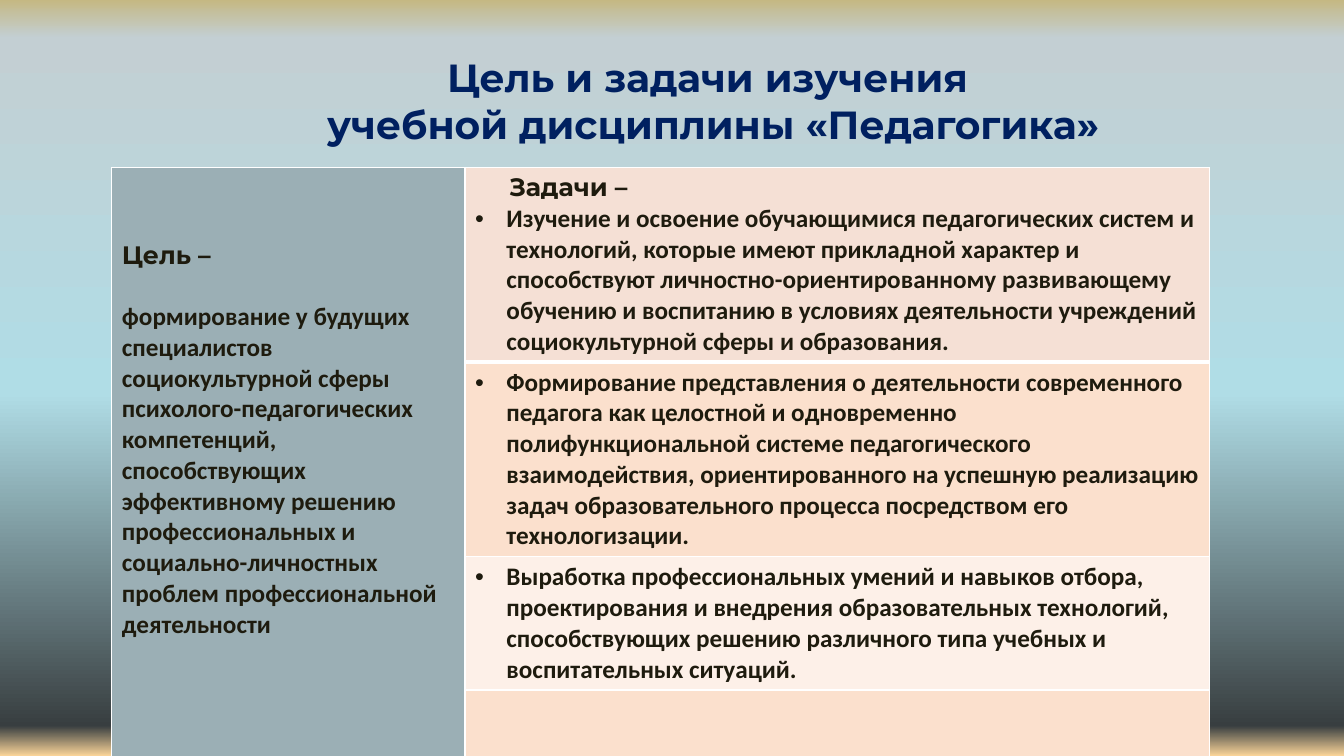
from dataclasses import dataclass

from lxml.etree import SubElement
from pptx import Presentation
from pptx.dml.color import RGBColor
from pptx.enum.text import MSO_ANCHOR, MSO_AUTO_SIZE, PP_ALIGN
from pptx.oxml.ns import qn
from pptx.util import Cm, Pt


@dataclass(frozen=True)
class Theme:
    heading_font: str = "Montserrat"
    body_font: str = "Calibri"
    title_size: int = 28
    body_size: int = 18
    title_color: str = "002060"
    text_color: str = "1E1B0E"
    border_color: str = "FFFFFF"
    goal_fill: str = "9BAFB5"
    task_fills: tuple = ("F5E0D5", "FBE0CD", "FDF0E8", "FBE0CD")
    background: tuple = ((0, "C5B883"), (5, "C3CFD3"), (52, "B0DDE6"),
                         (96, "383E40"), (100, "FBD599"))


THEME = Theme()
TITLE_LINES = ("Цель и задачи изучения ", "учебной дисциплины «Педагогика»")
GOAL_HEADING = "Цель –"
GOAL = (
    "формирование у будущих специалистов социокультурной сферы",
    "психолого-педагогических компетенций, способствующих эффективному решению "
    "профессиональных и социально-личностных проблем профессиональной деятельности",
)
TASKS_HEADING = "Задачи –"
TASKS = (
    "Изучение и освоение обучающимися педагогических систем и технологий, которые "
    "имеют прикладной характер и способствуют личностно-ориентированному "
    "развивающему обучению и воспитанию в условиях деятельности учреждений "
    "социокультурной сферы и образования.",
    "Формирование представления о деятельности современного педагога как целостной "
    "и одновременно полифункциональной системе педагогического взаимодействия, "
    "ориентированного на успешную реализацию задач образовательного процесса "
    "посредством его технологизации.",
    "Выработка профессиональных умений и навыков отбора, проектирования и внедрения "
    "образовательных технологий, способствующих решению различного типа учебных и "
    "воспитательных ситуаций.",
)
COLUMN_WIDTHS = (Cm(8.9), Cm(18.77))
ROW_HEIGHTS = (Cm(4.83), Cm(4.83), Cm(3.33), Cm(1.02))


def paint_background(slide):
    fill = slide.background.fill
    fill.gradient()
    fill.gradient_angle = 270
    stops = slide.element.find(".//" + qn("a:gsLst"))
    stops.clear()
    for position, color in THEME.background:
        stop = SubElement(stops, qn("a:gs"), pos=str(position * 1000))
        SubElement(stop, qn("a:srgbClr"), val=color)


def format_runs(paragraph, font_name, size, color):
    for run in paragraph.runs:
        run.font.name = font_name
        run.font.size = Pt(size)
        run.font.bold = True
        run.font.color.rgb = RGBColor.from_string(color)


def set_indent(paragraph, margin, first_line):
    properties = paragraph._p.get_or_add_pPr()
    properties.set("marL", str(margin))
    properties.set("indent", str(first_line))
    return properties


def add_title(slide, left, top, width, height):
    title = slide.shapes.title
    title.left, title.top, title.width, title.height = left, top, width, height
    frame = title.text_frame
    frame.text = "\n".join(TITLE_LINES)
    frame.word_wrap = True
    frame.auto_size = MSO_AUTO_SIZE.NONE
    frame.vertical_anchor = MSO_ANCHOR.BOTTOM
    for paragraph in frame.paragraphs:
        paragraph.alignment = PP_ALIGN.CENTER
        set_indent(paragraph, 0, Cm(1.25))
        format_runs(paragraph, THEME.heading_font, THEME.title_size, THEME.title_color)


def style_cell(cell, fill_color, bottom_width=1):
    """Draw the cell's borders, then its fill, in the order the schema asks for."""
    properties = cell._tc.get_or_add_tcPr()
    for side, width in (("L", 1), ("R", 1), ("T", 1), ("B", bottom_width)):
        line = SubElement(properties, qn("a:ln" + side), w=str(Pt(width)))
        line_fill = SubElement(line, qn("a:solidFill"))
        SubElement(line_fill, qn("a:srgbClr"), val=THEME.border_color)
    cell.fill.solid()
    cell.fill.fore_color.rgb = RGBColor.from_string(fill_color)


def format_heading(paragraph):
    format_runs(paragraph, THEME.heading_font, THEME.body_size, THEME.text_color)


def format_body(paragraph):
    format_runs(paragraph, THEME.body_font, THEME.body_size, THEME.text_color)


def fill_goal(cell):
    cell.margin_top = Cm(1.83)
    frame = cell.text_frame
    frame.text = "\n".join((GOAL_HEADING, *GOAL))
    heading, *body = frame.paragraphs
    format_heading(heading)
    body[0].space_before = Pt(22)
    for paragraph in body:
        format_body(paragraph)


def fill_task(cell, task, heading=None):
    frame = cell.text_frame
    frame.text = f"{heading}\n{task}" if heading else task
    if heading:
        set_indent(frame.paragraphs[0], Cm(0.86), 0)
        format_heading(frame.paragraphs[0])
    paragraph = frame.paragraphs[-1]
    properties = set_indent(paragraph, Cm(0.79), -Cm(0.79))
    SubElement(properties, qn("a:buFont"), typeface="Arial")
    SubElement(properties, qn("a:buChar"), char="•")
    format_body(paragraph)


def add_goal_table(slide, left, top):
    table = slide.shapes.add_table(len(ROW_HEIGHTS), len(COLUMN_WIDTHS), left, top,
                                   sum(COLUMN_WIDTHS), sum(ROW_HEIGHTS)).table
    table.first_row = table.horz_banding = False
    for column, width in zip(table.columns, COLUMN_WIDTHS):
        column.width = width
    for row, height in zip(table.rows, ROW_HEIGHTS):
        row.height = height

    goal_cell = table.cell(0, 0)
    goal_cell.merge(table.cell(len(ROW_HEIGHTS) - 1, 0))
    style_cell(goal_cell, THEME.goal_fill, bottom_width=3)
    fill_goal(goal_cell)

    for index, color in enumerate(THEME.task_fills):
        style_cell(table.cell(index, 1), color, bottom_width=3 if index == 0 else 1)
    for index, task in enumerate(TASKS):
        fill_task(table.cell(index, 1), task, TASKS_HEADING if index == 0 else None)


def main():
    presentation = Presentation()
    presentation.slide_width, presentation.slide_height = Cm(33.87), Cm(19.05)
    slide = presentation.slides.add_slide(presentation.slide_layouts[5])
    paint_background(slide)
    add_title(slide, Cm(1.24), Cm(0), Cm(32.21), Cm(3.84))
    add_goal_table(slide, Cm(2.82), Cm(4.22))
    presentation.save("out.pptx")


if __name__ == "__main__":
    main()
